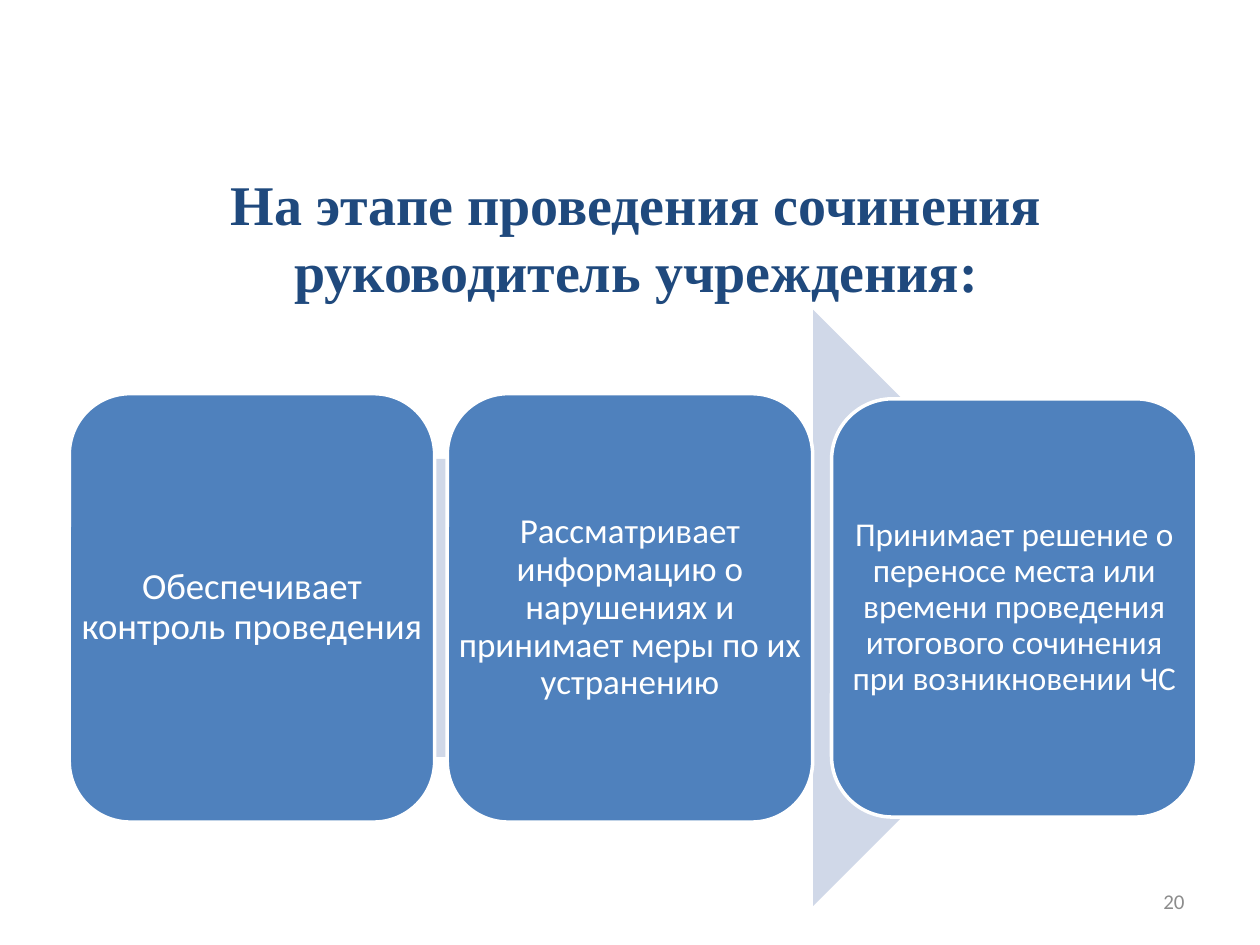
from pptx import Presentation
from pptx.util import Pt
from pptx.dml.color import RGBColor as RGB
from pptx.enum.shapes import MSO_SHAPE as Shape
from pptx.enum.text import MSO_ANCHOR as Anchor, PP_ALIGN as Align

THEME = {
    "title": {"name": "Times New Roman", "size": 32, "bold": True, "color": "1F497D"},
    "page": {"name": "Calibri", "size": 12, "color": "8C8C8C"},
    "card": {"name": "Calibri", "color": "FFFFFF"},
    "arrow": "D0D8E8", "fill": "4F81BD", "line": "FFFFFF",
}


def write(box, text, style, align, inset=None):
    frame = box.text_frame
    frame.word_wrap = True
    frame.vertical_anchor = Anchor.MIDDLE
    if inset is not None:
        for side in ("left", "top", "right", "bottom"):
            setattr(frame, "margin_" + side, Pt(inset))
    para = frame.paragraphs[0]
    para.text = text
    para.alignment = align
    font = para.runs[0].font
    for key, value in style.items():
        if key == "color":
            font.color.rgb = RGB.from_string(value)
        else:
            setattr(font, key, Pt(value) if key == "size" else value)
    return para


def draw(kind, area, fill):
    shape = slide.shapes.add_shape(kind, *map(Pt, area))
    shape.shadow.inherit = False
    shape.fill.solid()
    shape.fill.fore_color.rgb = RGB.from_string(fill)
    shape.line.fill.background()
    return shape


deck = Presentation()
deck.slide_width, deck.slide_height = Pt(720), Pt(540)
slide = deck.slides.add_slide(deck.slide_layouts[5])

# Title
title = slide.shapes.title
title.left, title.top, title.width, title.height = map(Pt, (39.6, 90, 648, 90))
write(title, "На этапе проведения сочинения руководитель учреждения:",
      THEME["title"], Align.CENTER)

# Page number
page = slide.shapes.add_textbox(Pt(516), Pt(500.5), Pt(168), Pt(28.75))
write(page, "20", THEME["page"], Align.RIGHT)

# Arrow behind the cards
draw(Shape.RIGHT_ARROW, (84.2, 177.1, 550.8, 340.6), THEME["arrow"])

# Cards, centred on the arrow: left, height, type size, inset, text
cards = [
    (39.6, 244.8, 21, 6.3, "Обеспечивает контроль проведения"),
    (255.6, 244.8, 20, 6, "Рассматривает информацию о нарушениях и принимает меры по их устранению"),
    (475.2, 239, 19, 5.7, "Принимает решение о переносе места или времени проведения "
                          "итогового сочинения при возникновении ЧС"),
]
mid, width = 347.4, 208.8
for left, height, size, inset, text in cards:
    area = (left, mid - height / 2, width, height)
    card = draw(Shape.ROUNDED_RECTANGLE, area, THEME["fill"])
    card.line.color.rgb = RGB.from_string(THEME["line"])
    card.line.width = Pt(2)
    # Text runs wider than the rounded corners allow inside the card
    label = slide.shapes.add_textbox(*map(Pt, area))
    para = write(label, text, {**THEME["card"], "size": size}, Align.CENTER, inset)
    para.line_spacing = 0.9

deck.save("out.pptx")
